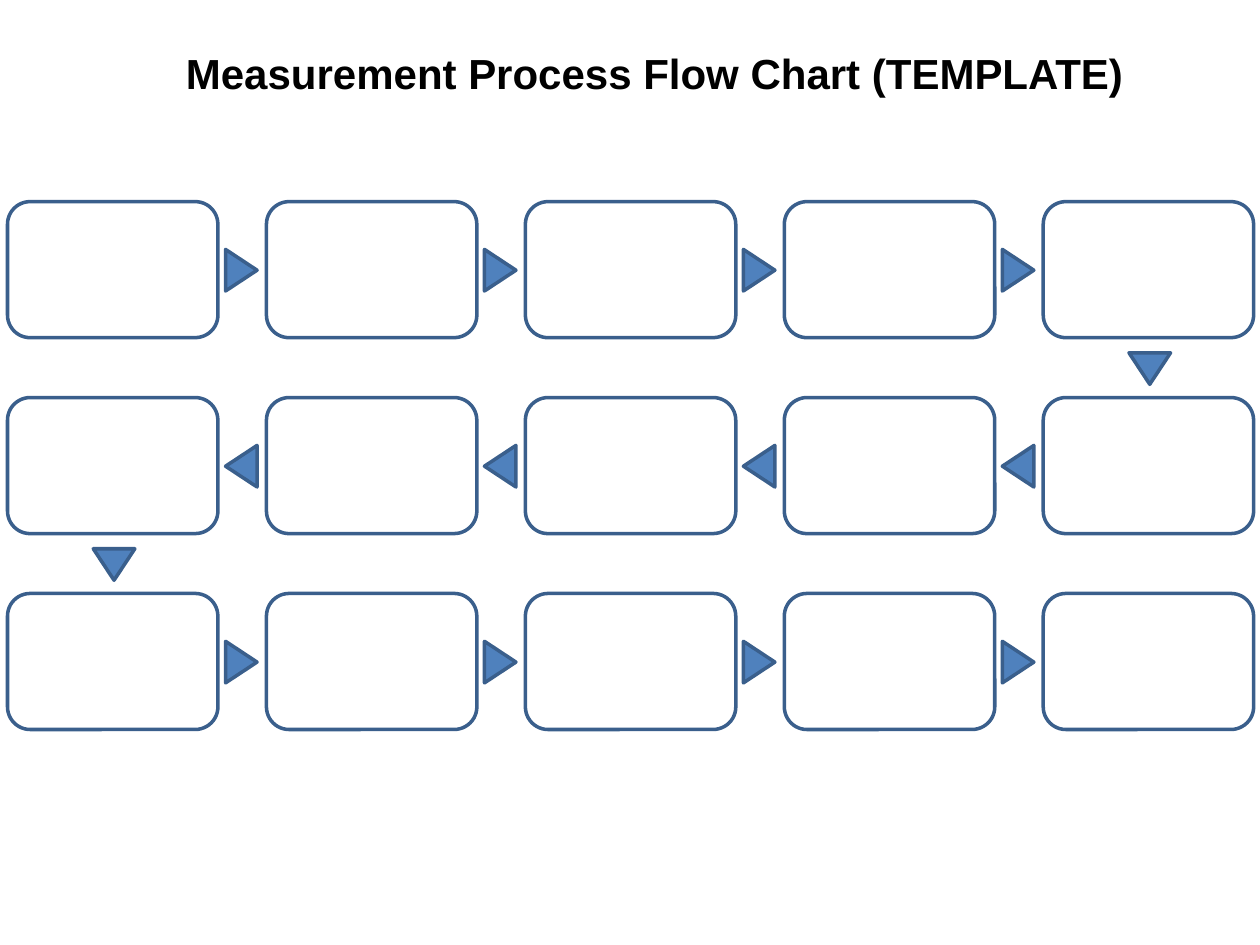
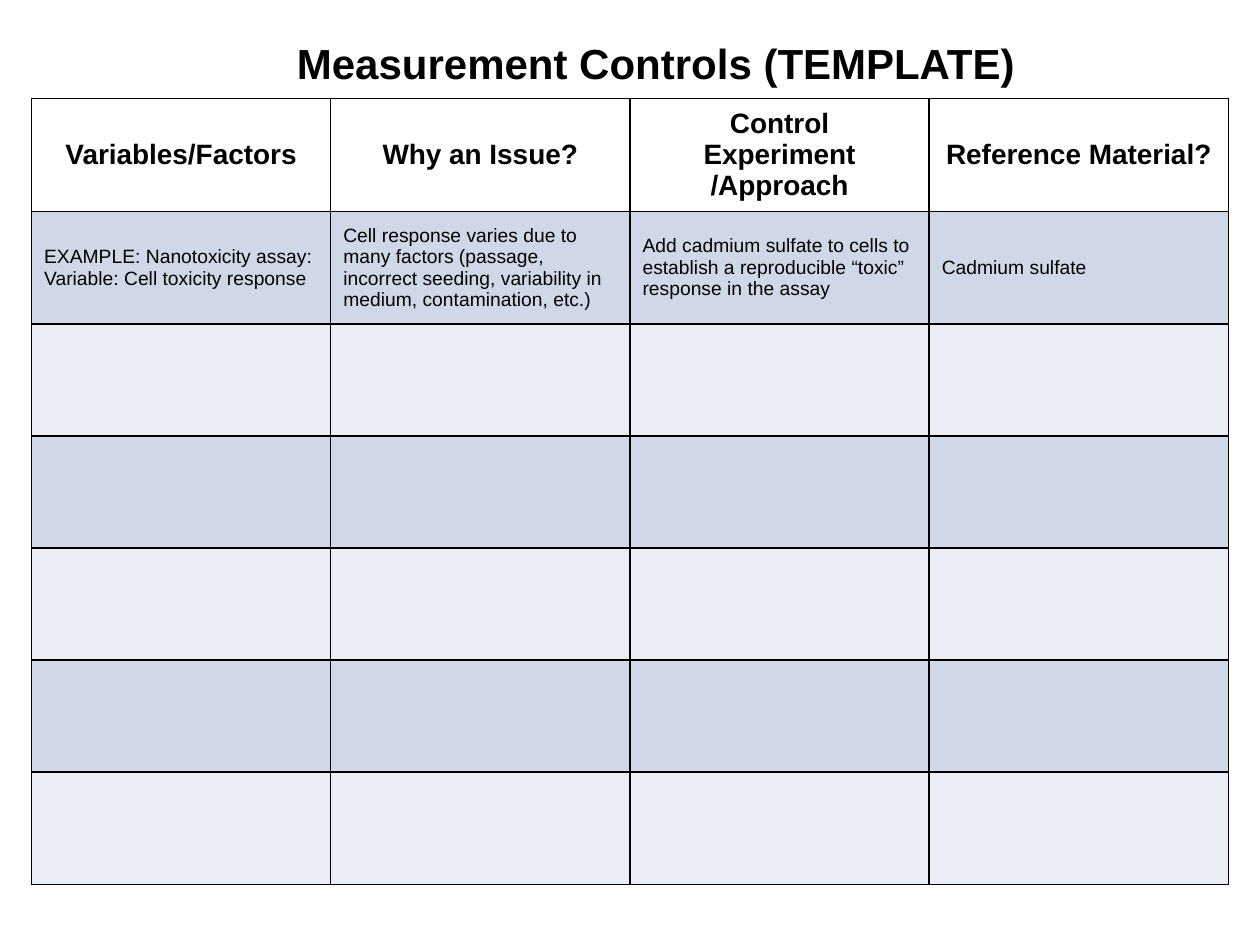
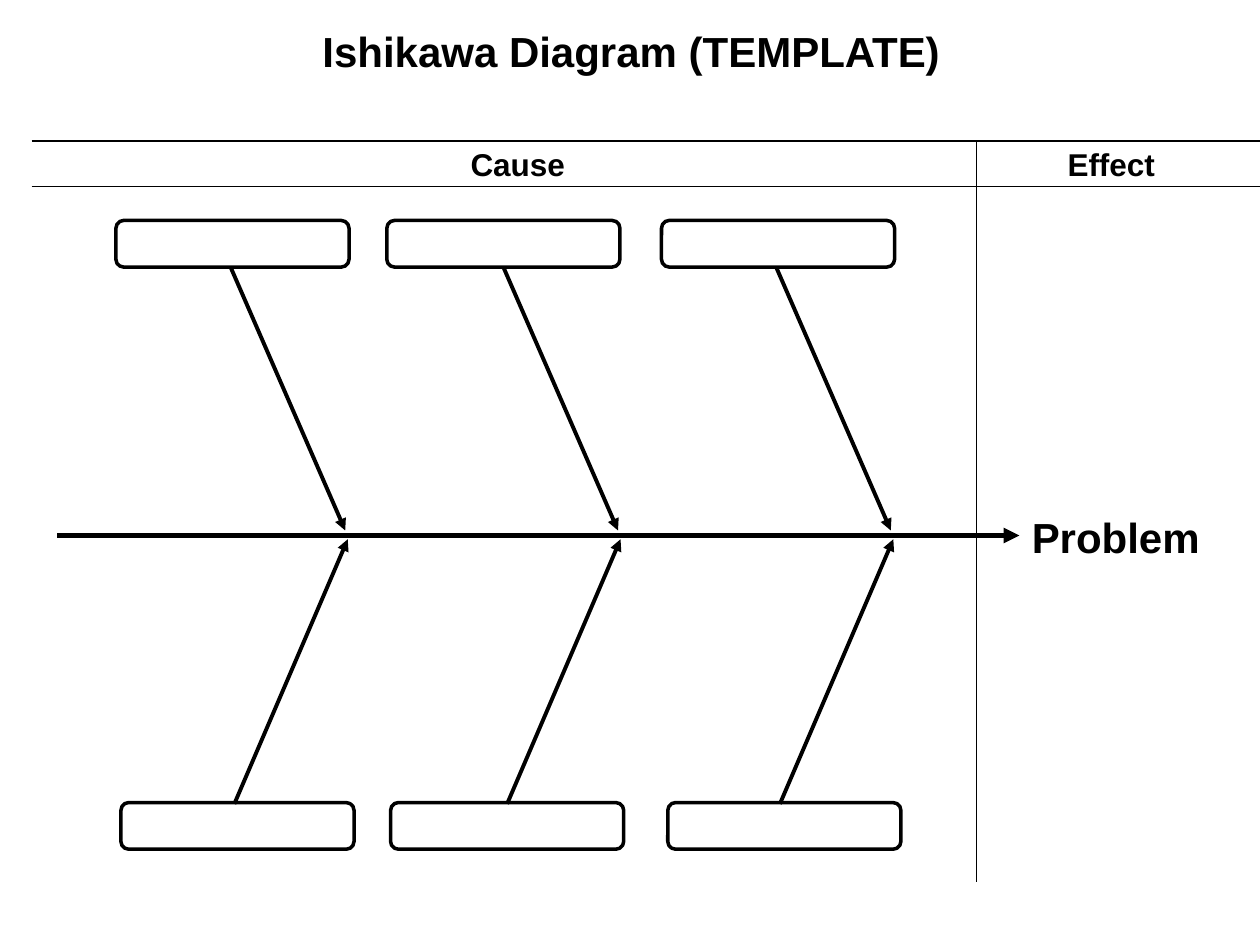
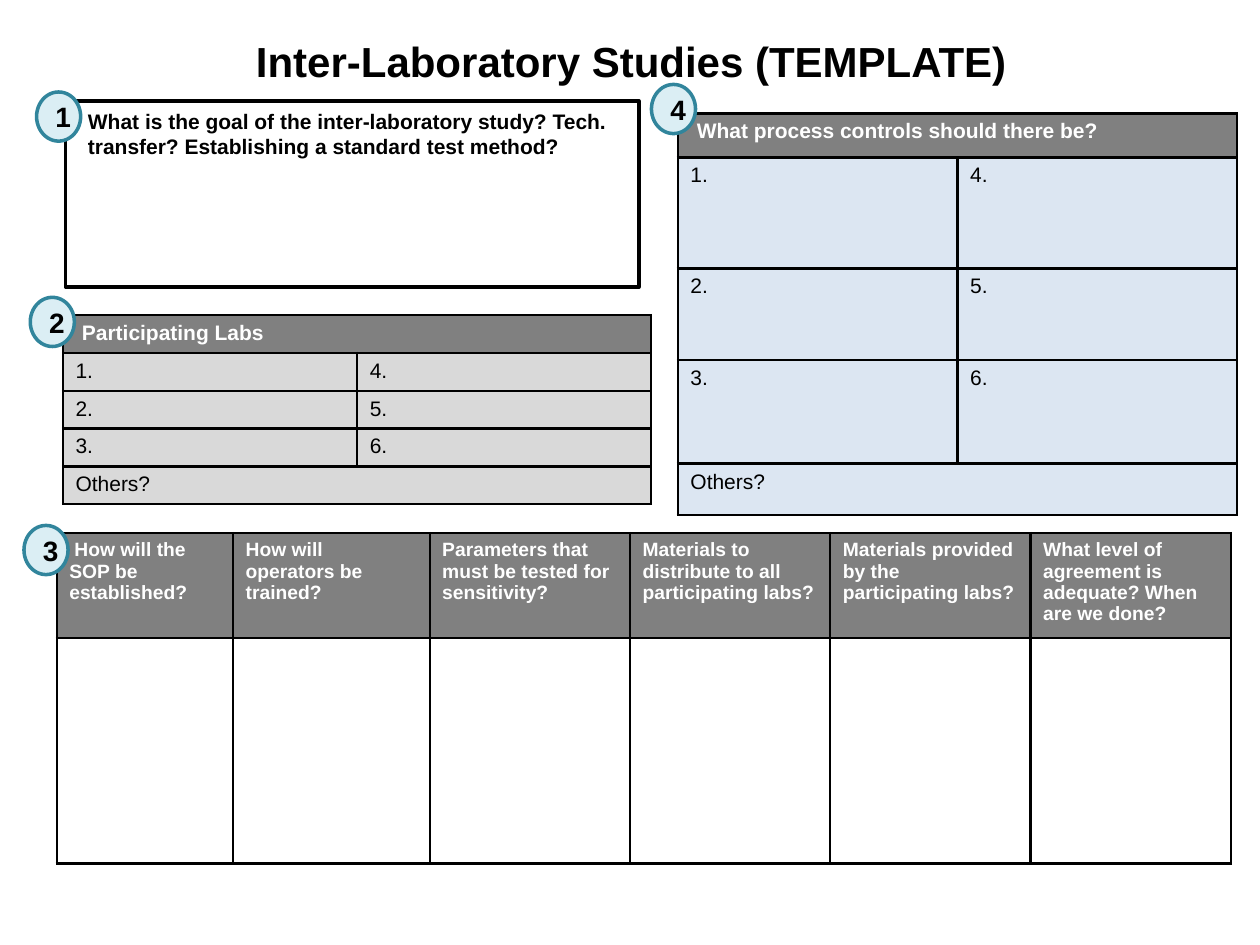
"""Build four measurement-planning template slides."""
import pptx
import pptx.util
import pptx.dml.color
import pptx.enum.shapes
import pptx.enum.text
import pptx.oxml.ns
from lxml import etree

Inches = pptx.util.Inches
Pt = pptx.util.Pt
SHAPE = pptx.enum.shapes.MSO_SHAPE
ALIGN = pptx.enum.text.PP_ALIGN
ANCHOR = pptx.enum.text.MSO_ANCHOR
qn = pptx.oxml.ns.qn

FONT = "Arial"
BLACK, WHITE, GRAY = "000000", "FFFFFF", "808080"
BLUE, NAVY = "4F81BD", "3A5F8C"
BAND_DARK, BAND_LIGHT = "D0D8E8", "E9EDF4"
LAB_GRAY, CONTROL_BLUE = "D9D9D9", "DCE6F2"
BADGE_FILL, BADGE_LINE = "DBEEF4", "31859C"
NUMBERED_ROWS = [["1.", "4."], ["2.", "5."], ["3.", "6."], ["Others?", ""]]


def rgb(color):
    """Turn a hex string into a colour."""
    return pptx.dml.color.RGBColor.from_string(color)


def paint(fill, color, alpha=100):
    """Fill with a colour, or with nothing when it is None."""
    if color is None:
        fill.background()
        return
    fill.solid()
    fill.fore_color.rgb = rgb(color)
    if alpha < 100:
        clr = fill._xPr.find(".//" + qn("a:srgbClr"))
        etree.SubElement(clr, qn("a:alpha"), val=str(alpha * 1000))


def write(tf, text, size, color=BLACK, bold=True, align=ALIGN.LEFT, indent=0):
    """Write one formatted paragraph for each line of text."""
    style = {"name": FONT, "size": Pt(size), "bold": bold}
    for i, line in enumerate(text.split("\n")):
        p = tf.add_paragraph() if i else tf.paragraphs[0]
        p.alignment = align
        if indent:
            p._p.get_or_add_pPr().set("indent", str(Inches(indent)))
        if not line:
            etree.SubElement(p._p, qn("a:endParaRPr"), sz=str(size * 100))
            continue
        r = p.add_run()
        r.text = line
        for key, value in style.items():
            setattr(r.font, key, value)
        r.font.color.rgb = rgb(color)


def place(sp, x, y, w, h):
    """Set position and size in inches."""
    box = {"left": x, "top": y, "width": w, "height": h}
    for key, value in box.items():
        setattr(sp, key, Inches(value))


def fit(tf):
    """Wrap text from the top in a box that grows with it."""
    style = {"word_wrap": True, "vertical_anchor": ANCHOR.TOP,
             "auto_size": pptx.enum.text.MSO_AUTO_SIZE.SHAPE_TO_FIT_TEXT}
    for key, value in style.items():
        setattr(tf, key, value)


def add_slide(prs, title, x, y, w):
    """Add a slide with its title."""
    s = prs.slides.add_slide(prs.slide_layouts[5])
    sp = s.shapes.title
    place(sp, x, y, w, 0.5)
    fit(sp.text_frame)
    write(sp.text_frame, title, 24, align=ALIGN.CENTER)
    return s


def add_label(s, text, x, y, w, h, size, align=ALIGN.LEFT):
    """Add a bold text box."""
    tf = s.shapes.add_textbox(*map(Inches, (x, y, w, h))).text_frame
    fit(tf)
    write(tf, text, size, align=align)


def add_box(s, kind, x, y, w, h, fill, line, rotation=0):
    """Add an outlined preset shape."""
    sp = s.shapes.add_shape(kind, *map(Inches, (x, y, w, h)))
    sp.shadow.inherit = False
    sp.rotation = rotation
    paint(sp.fill, fill)
    sp.line.color.rgb = rgb(line)
    sp.line.width = Pt(2)
    return sp


def add_badge(s, number, x, y):
    """Add a numbered circle."""
    sp = add_box(s, SHAPE.OVAL, x, y, 0.35, 0.39, BADGE_FILL, BADGE_LINE)
    sp.text_frame.vertical_anchor = ANCHOR.MIDDLE
    write(sp.text_frame, str(number), 16, align=ALIGN.CENTER)


def add_line(s, start, end, width, arrow=False):
    """Add a straight line, with an arrowhead at its start if wanted."""
    cx = s.shapes.add_connector(pptx.enum.shapes.MSO_CONNECTOR.STRAIGHT,
                                *map(Inches, (*start, *end)))
    cx.line.color.rgb = rgb(BLACK)
    cx.line.width = Pt(width)
    if arrow:
        etree.SubElement(cx.line._get_or_add_ln(), qn("a:headEnd"), type="triangle")
    etree.SubElement(cx._element.spPr, qn("a:effectLst"))


def add_grid(s, x, y, cols, rows):
    """Add an unstyled table with the given column widths and row heights."""
    size = map(Inches, (x, y, sum(cols), sum(rows)))
    table = s.shapes.add_table(len(rows), len(cols), *size).table
    table.first_row = table.horz_banding = False
    for col, w in zip(table.columns, cols):
        col.width = Inches(w)
    for row, h in zip(table.rows, rows):
        row.height = Inches(h)
    return table


def fill_cell(cell, text, size, fill, border, alpha=100, anchor=ANCHOR.TOP, **style):
    """Write, border and fill one cell."""
    write(cell.text_frame, text, size, **style)
    cell.vertical_anchor = anchor
    tc_pr = cell._tc.get_or_add_tcPr()
    for side in ("a:lnL", "a:lnR", "a:lnT", "a:lnB"):
        ln = etree.SubElement(tc_pr, qn(side), w=str(Pt(border)))
        solid = etree.SubElement(ln, qn("a:solidFill"))
        etree.SubElement(solid, qn("a:srgbClr"), val=BLACK)
    paint(cell.fill, fill, alpha)


def add_numbered_table(s, x, y, width, rows, heading, fill, alphas):
    """Add a two-column list under a merged heading."""
    table = add_grid(s, x, y, [width / 2] * 2, rows)
    for c, text in enumerate((heading, "")):
        fill_cell(table.cell(0, c), text, 12, GRAY, 1.5, 78, color=WHITE, indent=0.05)
    for r, (texts, alpha) in enumerate(zip(NUMBERED_ROWS, alphas), 1):
        for c, text in enumerate(texts):
            fill_cell(table.cell(r, c), text, 12, fill, 1.5, alpha, bold=False)
    for r in (0, len(rows) - 1):
        table.cell(r, 0).merge(table.cell(r, 1))


def flow_chart(prs):
    """Draw a three-row snake of empty process steps."""
    s = add_slide(prs, "Measurement Process Flow Chart (TEMPLATE)", 0.82, 0.33, 8.75)
    xs = [0.06 + c * 8.22 / 4 for c in range(5)]
    ys = [1.6 + r * 3.11 / 2 for r in range(3)]

    def arrow(x, y, rotation):
        add_box(s, SHAPE.ISOSCELES_TRIANGLE, x, y, 0.33, 0.25, BLUE, NAVY, rotation)

    for r, y in enumerate(ys):
        for x in xs:
            add_box(s, SHAPE.ROUNDED_RECTANGLE, x, y, 1.67, 1.08, WHITE, NAVY)
        for x in xs[:-1]:
            arrow(x + 1.69, y + 0.42, 270 if r % 2 else 90)
    for x, y in ((xs[-1], ys[0]), (xs[0], ys[1])):
        arrow(x + 0.68, y + 1.2, 180)


def controls(prs):
    """Lay out the table of measurement controls."""
    s = add_slide(prs, "Measurement Controls (TEMPLATE)", 0.83, 0.25, 8.75)
    heads = ["Variables/Factors", "Why an Issue?", "Control Experiment /Approach",
             "Reference Material?"]
    example = [
        "EXAMPLE: Nanotoxicity assay:\nVariable: Cell toxicity response",
        "Cell response varies due to many factors (passage, incorrect seeding, "
        "variability in medium, contamination, etc.)",
        "Add cadmium sulfate to cells to establish a reproducible “toxic” "
        "response in the assay",
        "Cadmium sulfate"]
    table = add_grid(s, 0.25, 0.78, [9.5 / 4] * 4, [0.64] + [0.89] * 6)
    for c, head in enumerate(heads):
        fill_cell(table.cell(0, c), head, 16, None, 1, anchor=ANCHOR.MIDDLE,
                  align=ALIGN.CENTER)
        for r in range(1, 7):
            fill_cell(table.cell(r, c), example[c] if r == 1 else "", 11,
                      BAND_DARK if r % 2 else BAND_LIGHT, 1,
                      anchor=ANCHOR.MIDDLE, bold=False)


def ishikawa(prs):
    """Draw the fishbone of causes and effect."""
    s = add_slide(prs, "Ishikawa Diagram (TEMPLATE)", 0.01, 0.15, 10)
    add_line(s, (8.09, 4.25), (0.45, 4.25), 3, arrow=True)
    for i in range(3):
        dx = 2.165 * i
        add_line(s, (2.74 + dx, 4.21), (1.83 + dx, 2.12), 2.25, arrow=True)
        add_line(s, (2.76 + dx, 4.28), (1.86 + dx, 6.38), 2.25, arrow=True)
    add_label(s, "Problem", 8.09, 4.01, 1.68, 0.5, 24)
    for text, x in (("Cause", 3.18), ("Effect", 7.89)):
        add_label(s, text, x, 1.1, 1.86, 0.4, 18, ALIGN.CENTER)
    add_line(s, (7.75, 1.12), (7.75, 7), 0.75)
    for y in (1.48, 1.12):
        add_line(s, (0.25, y), (10, y), 0.75)
    for y, xs in ((1.75, (0.92, 3.07, 5.25)), (6.37, (0.96, 3.1, 5.3))):
        for x in xs:
            add_box(s, SHAPE.ROUNDED_RECTANGLE, x, y, 1.85, 0.37, None, BLACK)


def lab_studies(prs):
    """Lay out the four parts of an inter-laboratory study."""
    s = add_slide(prs, "Inter-Laboratory Studies (TEMPLATE)", 0.01, 0.23, 10)
    questions = ["How will the SOP be established?", "How will operators be trained?",
                 "Parameters that must be tested for sensitivity?",
                 "Materials to distribute to all participating labs?",
                 "Materials provided by the participating labs?",
                 "What level of agreement is adequate? When are we done?"]
    table = add_grid(s, 0.45, 4.23, [1.4, 1.56] + [1.59] * 4, [0.68, 1.79])
    for c, text in enumerate(questions):
        fill_cell(table.cell(0, c), text, 11, GRAY, 1.5, 78, color=WHITE,
                  indent=0 if c else 0.04)
        fill_cell(table.cell(1, c), "", 11, WHITE, 1.5, 76)
    add_numbered_table(s, 0.5, 2.5, 4.67, [0.26] * 5, "Participating Labs",
                       LAB_GRAY, [80, 78, 100, 100])
    add_numbered_table(s, 5.38, 0.9, 4.44, [0.35, 0.88, 0.73, 0.82, 0.41],
                       "What process controls should there be?",
                       CONTROL_BLUE, [100] * 4)
    add_box(s, SHAPE.RECTANGLE, 0.52, 0.8, 4.55, 1.48, WHITE, BLACK)
    add_label(s, "What is the goal of the inter-laboratory study? Tech. transfer? "
              "Establishing a standard test method?", 0.6, 0.81, 4.47, 0.5, 12)
    badges = [(0.29, 0.73), (0.24, 2.36), (0.19, 4.17), (5.17, 0.67)]
    for number, (x, y) in enumerate(badges, 1):
        add_badge(s, number, x, y)


def main():
    """Build and save the slides."""
    prs = pptx.Presentation()
    prs.slide_width, prs.slide_height = Inches(10), Inches(7.5)
    for build in (flow_chart, controls, ishikawa, lab_studies):
        build(prs)
    prs.save("out.pptx")


if __name__ == "__main__":
    main()
